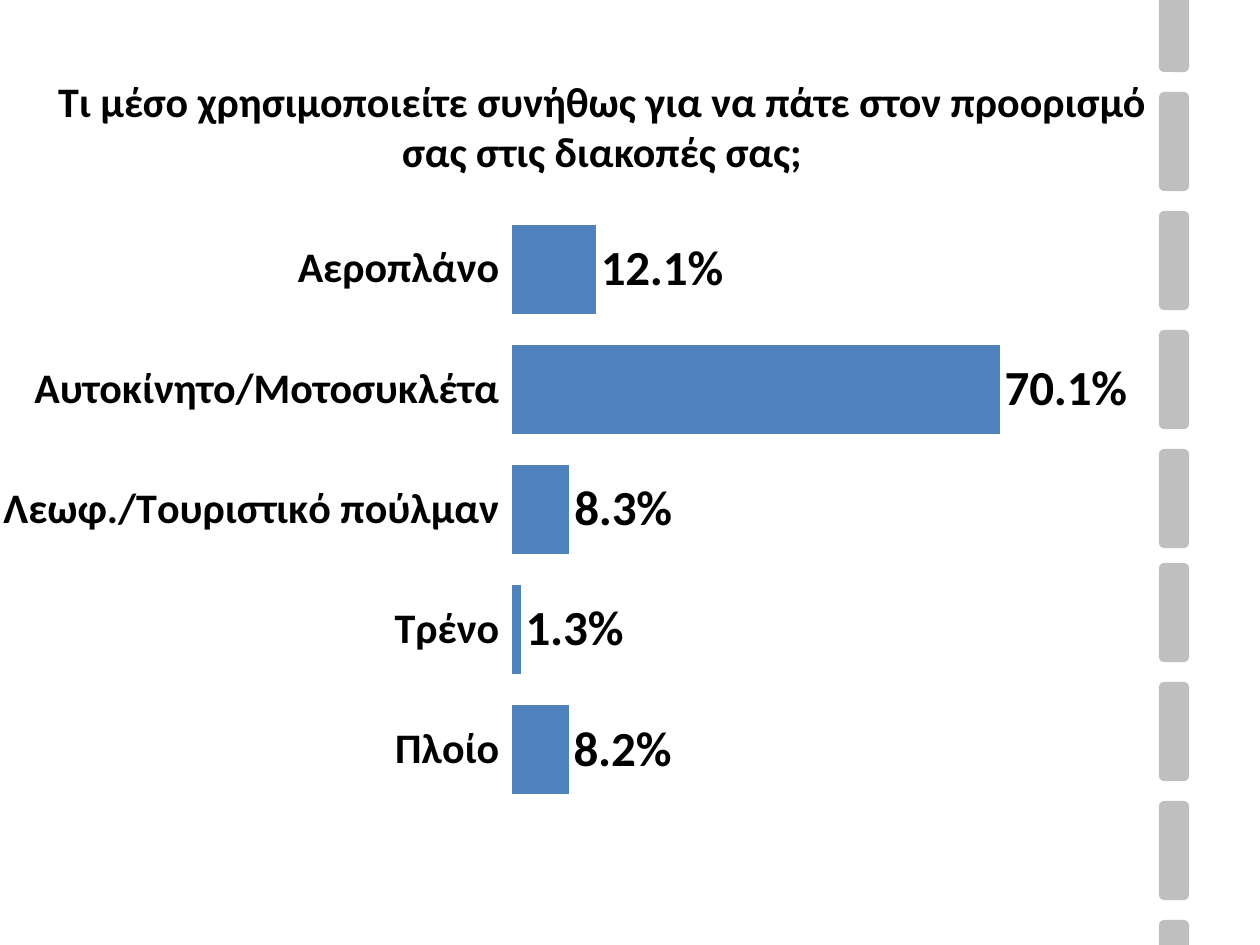
from dataclasses import dataclass

from lxml.etree import SubElement
from pptx import Presentation
from pptx.chart.data import CategoryChartData
from pptx.dml.color import RGBColor
from pptx.enum.chart import (XL_CHART_TYPE, XL_LABEL_POSITION,
                             XL_TICK_LABEL_POSITION, XL_TICK_MARK)
from pptx.enum.shapes import MSO_SHAPE
from pptx.enum.text import MSO_ANCHOR, MSO_AUTO_SIZE, PP_ALIGN
from pptx.oxml.ns import qn
from pptx.util import Emu, Pt

PX_PER_INCH = 126


@dataclass(frozen=True)
class Theme:
    font: str = "Calibri"
    text: RGBColor = RGBColor(0x00, 0x00, 0x00)
    bar: RGBColor = RGBColor(0x4F, 0x81, 0xBD)
    dash: RGBColor = RGBColor(0xBF, 0xBF, 0xBF)
    title_size: int = 24
    base_size: int = 18
    category_size: int = 24
    value_size: int = 28


THEME = Theme()
QUESTION = ("Τι μέσο χρησιμοποιείτε συνήθως για να πάτε στον προορισμό "
            "σας στις διακοπές σας;")
TRANSPORT = {
    "Αεροπλάνο": 0.121,
    "Αυτοκίνητο/Μοτοσυκλέτα": 0.701,
    "Λεωφ./Τουριστικό πούλμαν": 0.083,
    "Τρένο": 0.013,
    "Πλοίο": 0.082,
}


def px(n):
    return Emu(round(n * 914400 / PX_PER_INCH))


def style_font(font, size, bold):
    font.name = THEME.font
    font.size = Pt(size)
    font.bold = bold
    font.color.rgb = THEME.text


def place_title(sp, x, y, w, h):
    sp.left, sp.top, sp.width, sp.height = map(px, (x, y, w, h))
    tf = sp.text_frame
    tf.text = QUESTION
    tf.word_wrap = True
    tf.auto_size = MSO_AUTO_SIZE.NONE
    tf.vertical_anchor = MSO_ANCHOR.MIDDLE
    p = tf.paragraphs[0]
    p.alignment = PP_ALIGN.CENTER
    style_font(p.runs[0].font, THEME.title_size, True)


def add_dashed_road(slide, x, y, w, h):
    """Draw road dashes of size w by h down the edge, in two evenly spaced runs."""
    pitch = 119
    tops = [y + pitch * i for i in range(5)]
    tops += [y + 590 + pitch * i for i in range(4)]
    group = slide.shapes.add_group_shape()
    for top in tops:
        # Each dash lies flat, then turns about its centre.
        sp = group.shapes.add_shape(
            MSO_SHAPE.ROUNDED_RECTANGLE,
            px(x + (w - h) / 2), px(top + (h - w) / 2), px(h), px(w))
        sp.rotation = 270
        sp.shadow.inherit = False
        sp.fill.solid()
        sp.fill.fore_color.rgb = THEME.dash
        sp.line.fill.background()


def set_plot_area(chart, x, y, w, h):
    """Fix the inner plot area, in fractions of the chart box."""
    plot_area = chart.plots[0]._element.getparent()
    layout = plot_area.find(qn("c:layout"))
    if layout is None:
        layout = SubElement(plot_area, qn("c:layout"))
        plot_area.insert(0, layout)
    manual = SubElement(layout, qn("c:manualLayout"))
    settings = (("layoutTarget", "inner"), ("xMode", "edge"), ("yMode", "edge"),
                ("x", x), ("y", y), ("w", w), ("h", h))
    for tag, value in settings:
        SubElement(manual, qn(f"c:{tag}")).set("val", str(value))


def add_transport_chart(slide, x, y, w, h):
    data = CategoryChartData(number_format="0.0%")
    data.categories = list(TRANSPORT)
    data.add_series("Series 1", list(TRANSPORT.values()))
    chart = slide.shapes.add_chart(
        XL_CHART_TYPE.BAR_CLUSTERED, px(x), px(y), px(w), px(h), data).chart
    chart.has_title = False
    chart.has_legend = False
    style_font(chart.font, THEME.base_size, False)

    axis = chart.category_axis
    axis.reverse_order = True
    axis.major_tick_mark = XL_TICK_MARK.CROSS
    axis.tick_label_position = XL_TICK_LABEL_POSITION.LOW
    axis.format.line.fill.background()
    axis.has_major_gridlines = False
    style_font(axis.tick_labels.font, THEME.category_size, True)

    axis = chart.value_axis
    axis.minimum_scale = 0
    axis.maximum_scale = 0.8
    axis.has_major_gridlines = False
    axis.tick_labels.number_format = "0.0%"
    axis.tick_labels.number_format_is_linked = False
    axis.visible = False

    plot = chart.plots[0]
    plot.gap_width = 35
    plot.overlap = 9
    plot.vary_by_categories = False
    series = plot.series[0]
    series.format.fill.solid()
    series.format.fill.fore_color.rgb = THEME.bar
    labels = series.data_labels
    labels.show_value = True
    labels.position = XL_LABEL_POSITION.OUTSIDE_END
    labels.number_format = "0.0%"
    labels.number_format_is_linked = False
    style_font(labels.font, THEME.value_size, True)
    set_plot_area(chart, 0.45, 0.03, 0.49, 0.94)


def main():
    prs = Presentation()
    prs.slide_width, prs.slide_height = px(1260), px(945)
    slide = prs.slides.add_slide(prs.slide_layouts[5])
    place_title(slide.shapes.title, 35, 47, 1134, 158)
    add_dashed_road(slide, 1159, -27, 30, 99)
    add_transport_chart(slide, 0, 190, 1137, 639)
    prs.save("out.pptx")


if __name__ == "__main__":
    main()
